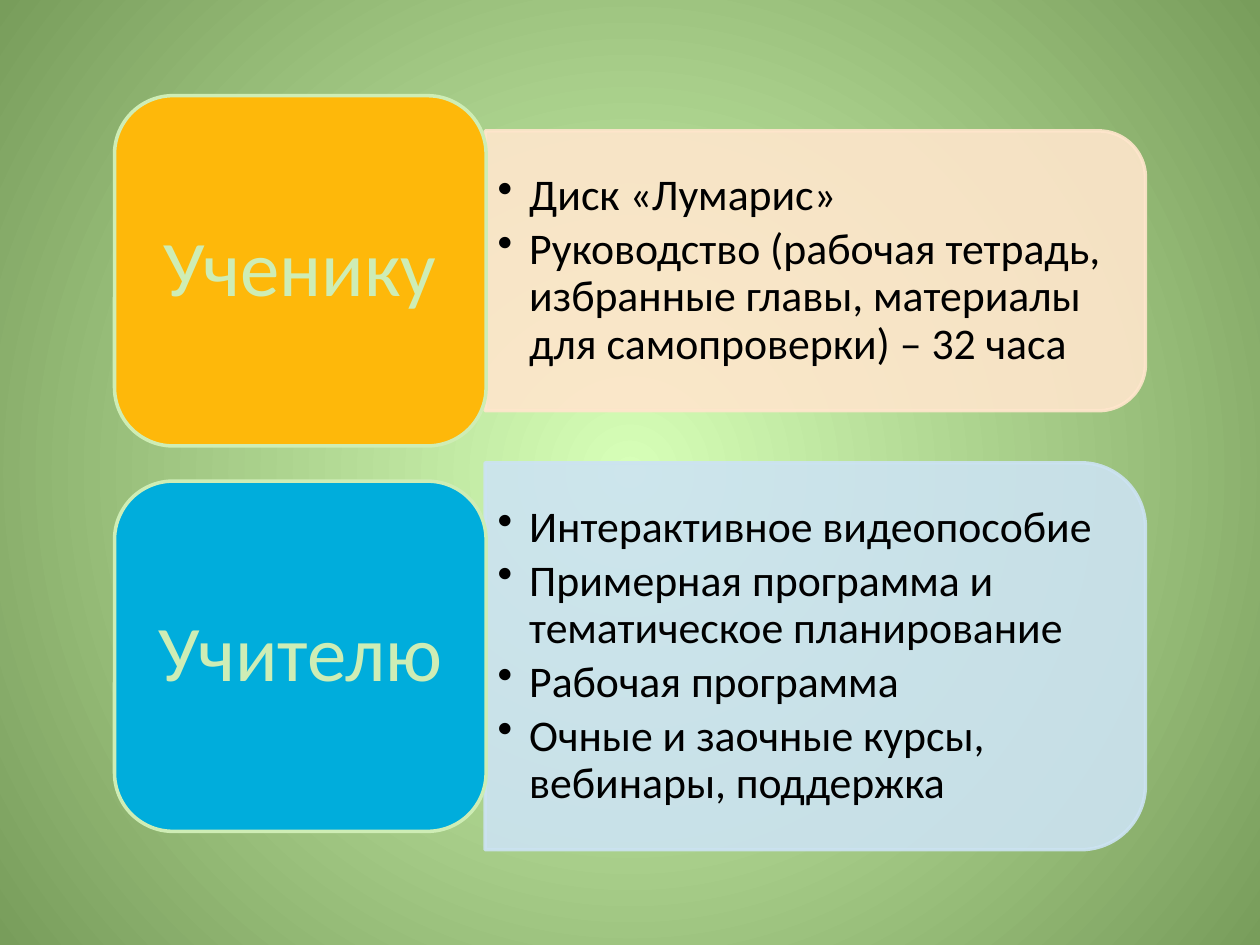
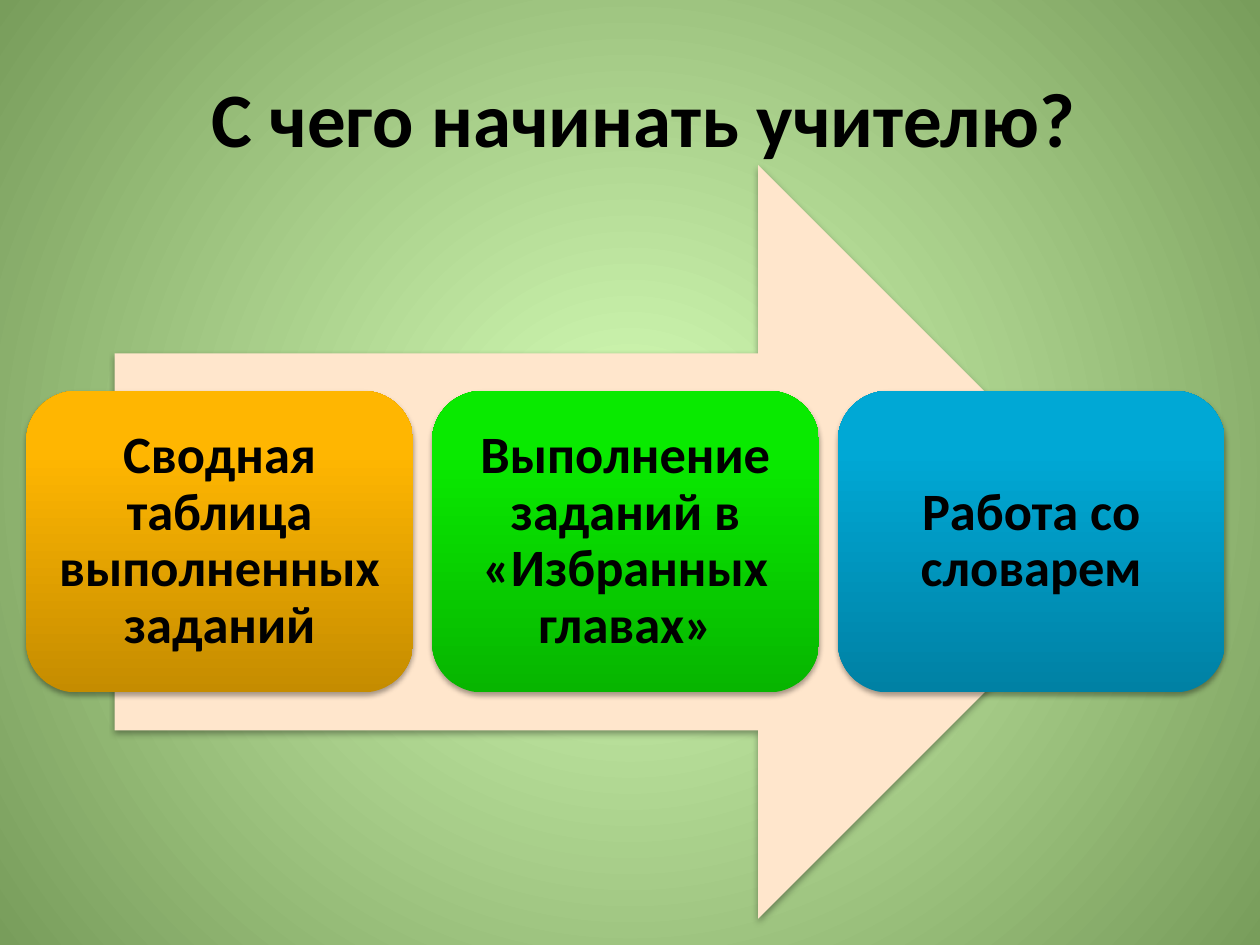
from lxml.etree import SubElement
from pptx import Presentation
from pptx.dml.color import RGBColor
from pptx.enum.shapes import MSO_SHAPE
from pptx.enum.text import MSO_ANCHOR, PP_ALIGN
from pptx.oxml.ns import qn
from pptx.util import Cm, Pt

# Shared look
FONT = "Calibri"
BLACK, MINT, PEACH, ICE = "000000", "CEEDB5", "FFE6CC", "CCE3F2"
BG_CENTER, BG_EDGE = "D7FFB8", "789D5B"

# Slide 1: label cards with a list panel centred on each
LABEL_X, LABEL_W, LABEL_H = 2.31, 7.49, 7.06
PANEL_X, PANEL_W, LIST_W = 9.78, 13.31, 13
AUDIENCES = [
    ("Ученику", "FEB80A", PEACH, 1.93, 5.64, [
        "Диск «Лумарис»",
        "Руководство (рабочая тетрадь, избранные главы, "
        "материалы для самопроверки) – 32 часа"]),
    ("Учителю", "00ADDC", ICE, 9.7, 7.8, [
        "Интерактивное видеопособие",
        "Примерная программа и тематическое планирование",
        "Рабочая программа",
        "Очные и заочные курсы, вебинары, поддержка"]),
]

# Slide 2: step cards on an arrow
STEP_X, STEP_Y, STEP_W, STEP_H, STEP_PITCH = 0.53, 7.88, 7.8, 6.08, 8.18
STEPS = [
    ("Сводная таблица выполненных заданий", "C58C00", "FFB601"),
    ("Выполнение заданий в «Избранных главах»", "07B500", "09EA00"),
    ("Работа со словарем", "0081A4", "00A8D5"),
]


def rgb(color):
    return RGBColor.from_string(color)


def set_gradient(fill, start, end, end_position=1.0):
    fill.gradient()
    first, last = fill.gradient_stops
    first.color.rgb, last.color.rgb = rgb(start), rgb(end)
    first.position, last.position = 0, end_position


def add_slide(prs):
    """Blank slide with the radial green background."""
    s = prs.slides.add_slide(prs.slide_layouts[6])
    set_gradient(s.background.fill, BG_CENTER, BG_EDGE)
    lin = s.element.find(".//" + qn("a:lin"))
    grad = lin.getparent()
    grad.remove(lin)
    radial = SubElement(grad, qn("a:path"), path="circle")
    SubElement(radial, qn("a:fillToRect"), l="50000", t="50000", r="50000", b="50000")
    return s


def add_block(s, kind, x, y, w, h, fill=None, line=None):
    sp = s.shapes.add_shape(kind, Cm(x), Cm(y), Cm(w), Cm(h))
    sp.shadow.inherit = False
    if fill:
        sp.fill.solid()
        sp.fill.fore_color.rgb = rgb(fill)
    if line:
        sp.line.color.rgb = rgb(line)
        sp.line.width = Pt(2)
    else:
        sp.line.fill.background()
    return sp


def add_shadow(sp):
    effects = sp.element.spPr.find(qn("a:effectLst"))
    shadow = SubElement(effects, qn("a:outerShdw"), blurRad=str(Pt(3.1)),
                        dist=str(Pt(1.8)), dir="5400000", rotWithShape="0")
    color = SubElement(shadow, qn("a:srgbClr"), val=BLACK)
    SubElement(color, qn("a:alpha"), val="35000")


def write(sp, texts, size, color=BLACK, bold=False, align=PP_ALIGN.CENTER,
          spacing=0.9, margins=(0.25, 0.13)):
    tf = sp.text_frame
    tf.word_wrap = True
    tf.vertical_anchor = MSO_ANCHOR.MIDDLE
    tf.margin_left = tf.margin_right = Cm(margins[0])
    tf.margin_top = tf.margin_bottom = Cm(margins[1])
    for i, text in enumerate(texts):
        p = tf.paragraphs[0] if i == 0 else tf.add_paragraph()
        p.text = text
        p.alignment = align
        p.line_spacing = spacing
        p.font.name, p.font.size, p.font.bold = FONT, Pt(size), bold
        p.font.color.rgb = rgb(color)
    return tf


def add_text(s, x, y, w, h, texts, size, **style):
    box = s.shapes.add_textbox(Cm(x), Cm(y), Cm(w), Cm(h))
    return write(box, texts, size, **style)


def add_panel(s, y, h, color):
    """Translucent panel rounded on the right: a top-rounded box turned by 90°."""
    shift = (PANEL_W - h) / 2
    sp = add_block(s, MSO_SHAPE.ROUND_2_SAME_RECTANGLE,
                   PANEL_X + shift, y - shift, h, PANEL_W, color, color)
    sp.rotation = 90
    for clr in sp.element.spPr.iter(qn("a:srgbClr")):
        SubElement(clr, qn("a:alpha"), val="90000")


def add_bullets(s, y, h, items):
    tf = add_text(s, PANEL_X, y, LIST_W, h, items, 25, align=PP_ALIGN.LEFT)
    for p in tf.paragraphs:
        p.space_after = Pt(3.75)
        pPr = p._p.get_or_add_pPr()
        pPr.set("marL", str(Cm(0.64)))
        pPr.set("indent", str(-Cm(0.64)))
        bullet = pPr.makeelement(qn("a:buChar"), {"char": "•"})
        pPr.insert_element_before(bullet, "a:tabLst", "a:defRPr", "a:extLst")


def add_audience(s, label, color, panel_color, y, panel_h, items):
    panel_y = y + (LABEL_H - panel_h) / 2
    add_panel(s, panel_y, panel_h, panel_color)
    add_bullets(s, panel_y, panel_h, items)
    card = add_block(s, MSO_SHAPE.ROUNDED_RECTANGLE,
                     LABEL_X, y, LABEL_W, LABEL_H, color, MINT)
    write(card, [label], 45, MINT, margins=(0.48, 0.23))


def add_step(s, x, text, dark, light):
    card = add_block(s, MSO_SHAPE.ROUNDED_RECTANGLE, x, STEP_Y, STEP_W, STEP_H)
    set_gradient(card.fill, dark, light, 0.8)
    card.fill.gradient_angle = 90
    add_shadow(card)
    write(card, [text], 30, bold=True, margins=(0.3, 0.3))


def main():
    prs = Presentation()
    prs.slide_width, prs.slide_height = Cm(25.4), Cm(19.05)

    # Materials for the student and the teacher
    s = add_slide(prs)
    for audience in AUDIENCES:
        add_audience(s, *audience)

    # Where the teacher starts
    s = add_slide(prs)
    add_text(s, 1.27, 0.76, 23.42, 3.18, ["С чего начинать учителю?"], 44,
             bold=True, spacing=1.0)
    arrow = add_block(s, MSO_SHAPE.RIGHT_ARROW, 2.31, 3.33, 20.57, 15.19, PEACH)
    add_shadow(arrow)
    for i, step in enumerate(STEPS):
        add_step(s, STEP_X + i * STEP_PITCH, *step)

    prs.save("out.pptx")


if __name__ == "__main__":
    main()
